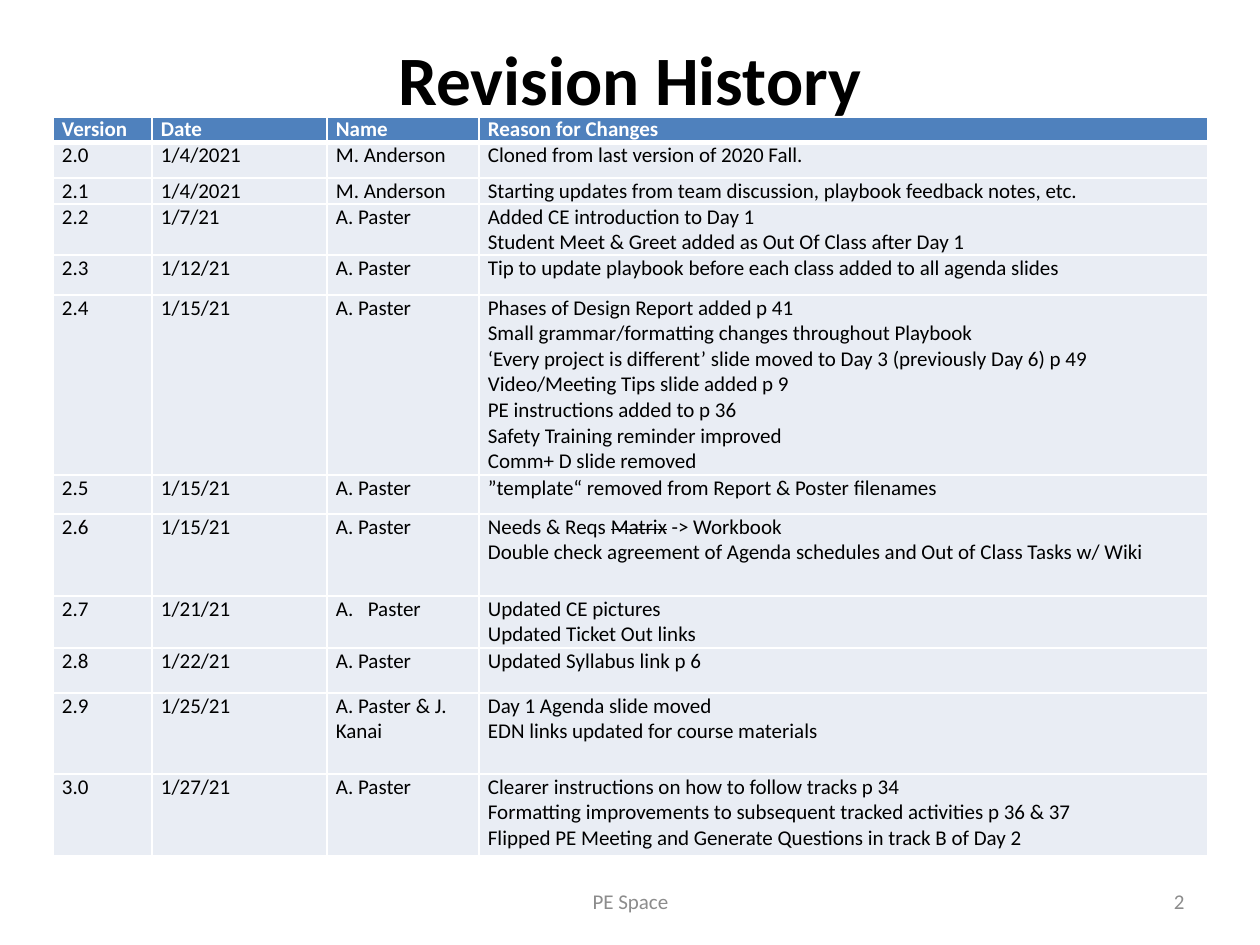
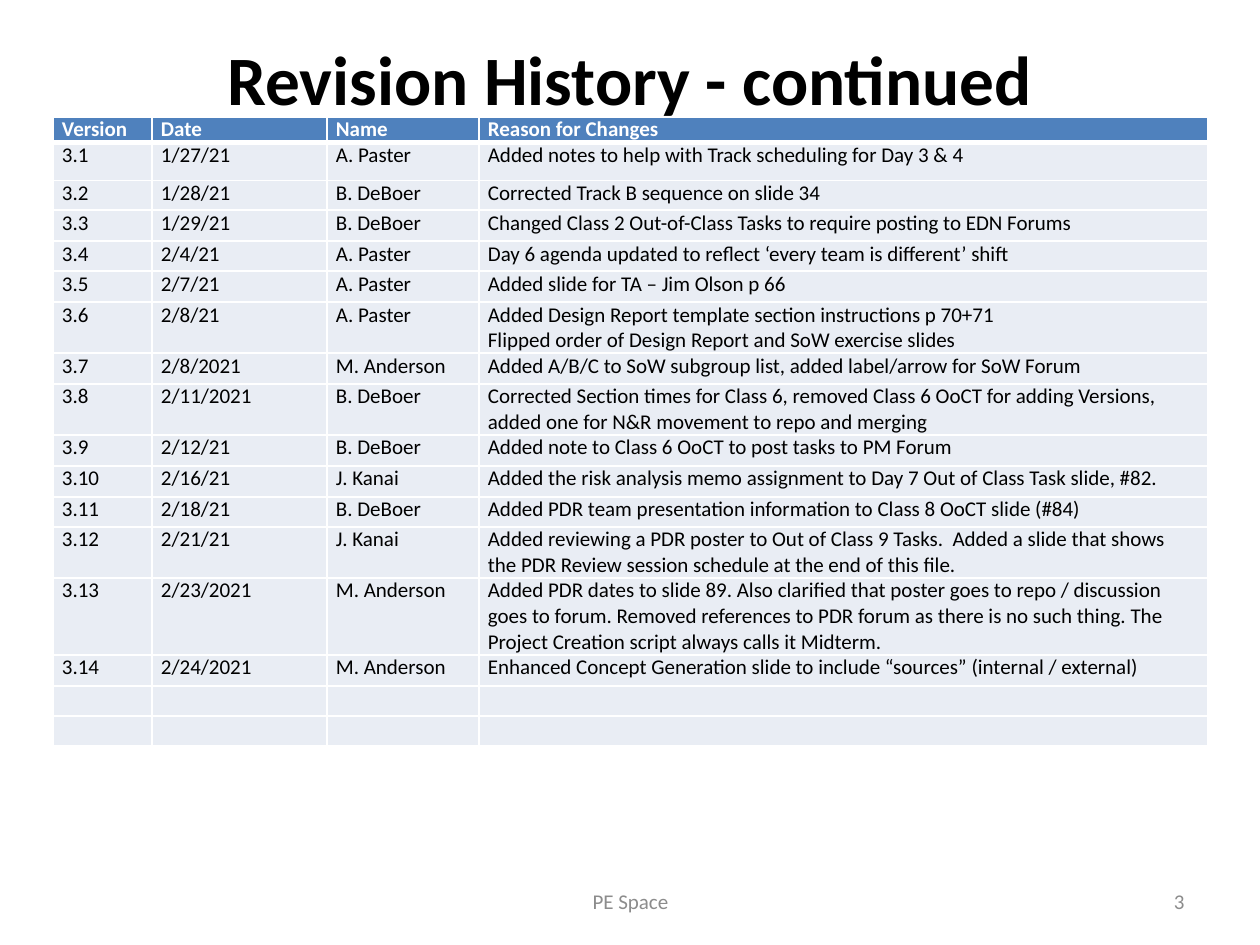
from lxml import etree
from pptx import Presentation
from pptx.dml.color import RGBColor
from pptx.enum.text import MSO_ANCHOR, PP_ALIGN
from pptx.oxml.ns import qn
from pptx.util import Emu, Pt

LEFT, CENTER, RIGHT = PP_ALIGN.LEFT, PP_ALIGN.CENTER, PP_ALIGN.RIGHT
TOP, MIDDLE = MSO_ANCHOR.TOP, MSO_ANCHOR.MIDDLE

FONT = "Calibri"
BLACK, WHITE, GRAY = "000000", "FFFFFF", "8C8C8C"
BLUE, PALE = "4F81BD", "E9EDF4"

FOOTER = "PE Space"
HEAD = ("Version", "Date", "Name", "Reason for Changes")
COLS = (99, 175, 152, 729)
HEAD_H = 25
TABLE_X, TABLE_Y = 53, 117
CELL_PAD = 9

# Row: height, version, date, name, reason.
# In texts, ~ ~ strikes words out, a line break starts a paragraph
# and a leading # makes a lettered list item.
PAGES = [
    (2, "Revision History", [
        (36, "2.0", "1/4/2021", "M. Anderson", "Cloned from last version of 2020 Fall."),
        (26, "2.1", "1/4/2021", "M. Anderson",
         "Starting updates from team discussion, playbook feedback notes, etc."),
        (51, "2.2", "1/7/21", "A. Paster",
         "Added CE introduction to Day 1\n"
         "Student Meet & Greet added as Out Of Class after Day 1"),
        (40, "2.3", "1/12/21", "A. Paster",
         "Tip to update playbook before each class added to all agenda slides"),
        (180, "2.4", "1/15/21", "A. Paster",
         "Phases of Design Report added p 41\n"
         "Small grammar/formatting changes throughout Playbook\n"
         "‘Every project is different’ slide moved to Day 3 (previously Day 6) p 49\n"
         "Video/Meeting Tips slide added p 9\n"
         "PE instructions added to p 36\n"
         "Safety Training reminder improved\n"
         "Comm+ D slide removed"),
        (39, "2.5", "1/15/21", "A. Paster",
         "”template“ removed from Report & Poster filenames"),
        (82, "2.6", "1/15/21", "A. Paster",
         "Needs & Reqs ~Matrix~ -> Workbook\n"
         "Double check agreement of Agenda schedules and Out of Class Tasks w/ Wiki"),
        (52, "2.7", "1/21/21", "#Paster", "Updated CE pictures\nUpdated Ticket Out links"),
        (45, "2.8", "1/22/21", "A. Paster", "Updated Syllabus link p 6"),
        (81, "2.9", "1/25/21", "A. Paster & J. Kanai",
         "Day 1 Agenda slide moved\nEDN links updated for course materials"),
        (82, "3.0", "1/27/21", "A. Paster",
         "Clearer instructions on how to follow tracks p 34\n"
         "Formatting improvements to subsequent tracked activities p 36 & 37\n"
         "Flipped PE Meeting and Generate Questions in track B of Day 2"),
    ]),
    (3, "Revision History - continued", [
        (38, "3.1", "1/27/21", "A. Paster",
         "Added notes to help with Track scheduling for Day 3 & 4"),
        (30, "3.2", "1/28/21", "B. DeBoer", "Corrected Track B sequence on slide 34"),
        (31, "3.3", "1/29/21", "B. DeBoer",
         "Changed Class 2 Out-of-Class Tasks to require posting to EDN Forums"),
        (30, "3.4", "2/4/21", "A. Paster",
         "Day 6 agenda updated to reflect ‘every team is different’ shift"),
        (31, "3.5", "2/7/21", "A. Paster", "Added slide for TA – Jim Olson p 66"),
        (51, "3.6", "2/8/21", "A. Paster",
         "Added Design Report template section instructions p 70+71\n"
         "Flipped order of Design Report and SoW exercise slides"),
        (31, "3.7", "2/8/2021", "M. Anderson",
         "Added A/B/C to SoW subgroup list, added label/arrow for SoW Forum"),
        (51, "3.8", "2/11/2021", "B. DeBoer",
         "Corrected Section times for Class 6, removed Class 6 OoCT for adding Versions, "
         "added one for N&R movement to repo and merging"),
        (31, "3.9", "2/12/21", "B. DeBoer",
         "Added note to Class 6 OoCT to post tasks to PM Forum"),
        (31, "3.10", "2/16/21", "J. Kanai",
         "Added the risk analysis memo assignment to Day 7 Out of Class Task slide, #82."),
        (30, "3.11", "2/18/21", "B. DeBoer",
         "Added PDR team presentation information to Class 8 OoCT slide (#84)"),
        (51, "3.12", "2/21/21", "J. Kanai",
         "Added reviewing a PDR poster to Out of Class 9 Tasks.  Added a slide that shows "
         "the PDR Review session schedule at the end of this file."),
        (77, "3.13", "2/23/2021", "M. Anderson",
         "Added PDR dates to slide 89. Also clarified that poster goes to repo / discussion "
         "goes to forum. Removed references to PDR forum as there is no such thing. The "
         "Project Creation script always calls it Midterm."),
        (31, "3.14", "2/24/2021", "M. Anderson",
         "Enhanced Concept Generation slide to include “sources” (internal / external)"),
        (30, "", "", "", ""),
        (30, "", "", "", ""),
    ]),
]


def px(n):
    return Emu(round(n * 914400 / 126))


def rgb(code):
    return RGBColor.from_string(code)


def letter(para):
    """Number the paragraph A., B., ... with a hanging indent."""
    props = para._p.get_or_add_pPr()
    props.set("marL", str(px(32)))
    props.set("indent", str(-px(32)))
    etree.SubElement(props, qn("a:buFont"), typeface="+mj-lt")
    etree.SubElement(props, qn("a:buAutoNum"), type="alphaUcPeriod")


def write(frame, text, size=12, color=BLACK, bold=False, align=LEFT):
    for i, line in enumerate(text.split("\n")):
        para = frame.add_paragraph() if i else frame.paragraphs[0]
        para.alignment = align
        if line.startswith("#"):
            letter(para)
            line = line[1:]
        if not line:
            etree.SubElement(para._p, qn("a:endParaRPr"), sz=str(size * 100))
            continue
        for j, part in enumerate(line.split("~")):
            run = para.add_run()
            run.text = part
            font = run.font
            font.name, font.size, font.bold = FONT, Pt(size), bold
            font.color.rgb = rgb(color)
            if j % 2:
                font._element.set("strike", "sngStrike")


def label(slide, text, x, y, w, h, anchor=MIDDLE, **style):
    frame = slide.shapes.add_textbox(px(x), px(y), px(w), px(h)).text_frame
    frame.word_wrap = True
    frame.vertical_anchor = anchor
    frame.margin_top = frame.margin_bottom = 0
    write(frame, text, **style)


def edge(cell, **widths):
    """Draw white cell borders; widths in points by side."""
    props = cell._tc.get_or_add_tcPr()
    for side in "LRTB":
        line = etree.SubElement(props, qn("a:ln" + side), w=str(Pt(widths.get(side, 1))))
        fill = etree.SubElement(line, qn("a:solidFill"))
        etree.SubElement(fill, qn("a:srgbClr"), val=WHITE)


def history(slide, rows):
    rows = [(HEAD_H, *HEAD), *rows]
    high = sum(row[0] for row in rows)
    table = slide.shapes.add_table(len(rows), len(COLS), px(TABLE_X), px(TABLE_Y),
                                   px(sum(COLS)), px(high)).table
    for col, wide in zip(table.columns, COLS):
        col.width = px(wide)
    for r, (tall, *texts) in enumerate(rows):
        table.rows[r].height = px(tall)
        head = r == 0
        for c, text in enumerate(texts):
            cell = table.cell(r, c)
            cell.margin_left = cell.margin_right = px(CELL_PAD)
            cell.margin_top = cell.margin_bottom = 0
            edge(cell, B=3 if head else 1, T=3 if r == 1 else 1)
            cell.fill.solid()
            cell.fill.fore_color.rgb = rgb(BLUE if head else PALE)
            write(cell.text_frame, text, color=WHITE if head else BLACK, bold=head)


def main():
    deck = Presentation()
    deck.slide_width, deck.slide_height = px(1260), px(945)
    for number, title, rows in PAGES:
        slide = deck.slides.add_slide(deck.slide_layouts[6])
        label(slide, title, 63, 36, 1134, 158, anchor=TOP,
              size=39.6, bold=True, align=CENTER)
        history(slide, rows)
        label(slide, FOOTER, 431, 876, 399, 50, color=GRAY, align=CENTER)
        label(slide, str(number), 903, 876, 294, 50, color=GRAY, align=RIGHT)
    deck.save("out.pptx")


if __name__ == "__main__":
    main()
